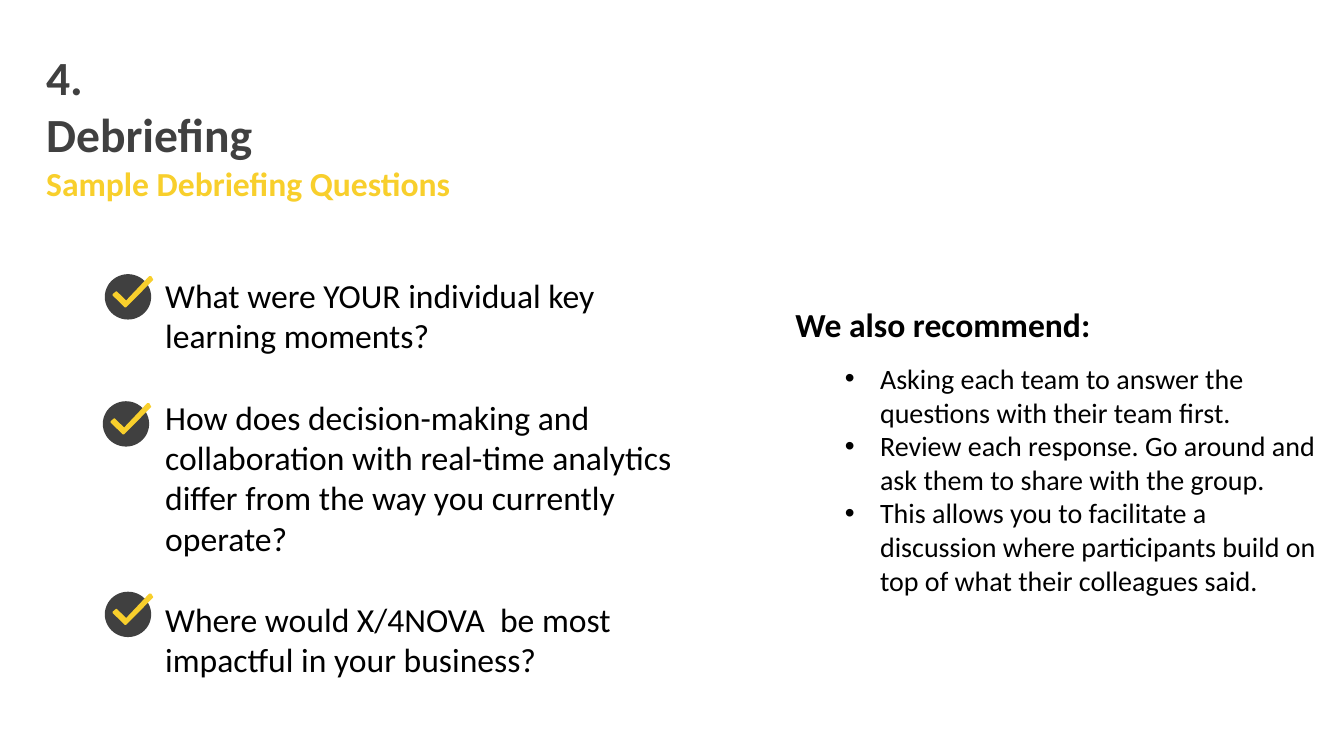
from pptx import Presentation
from pptx.dml.color import RGBColor
from pptx.enum.shapes import MSO_SHAPE
from pptx.enum.text import MSO_ANCHOR, MSO_AUTO_SIZE, PP_ALIGN
from pptx.util import Inches, Pt
from lxml.etree import SubElement
from pptx.oxml.ns import qn

COLORS = {"dark": "404040", "yellow": "F8CF2C", "black": "000000", "white": "FFFFFF"}
FONT = "Calibri"
W, H = Inches(13.33), Inches(7.5)
COL, ROW = W / 100, H / 100
TICK = [(17, 44), (24, 38), (26, 38), (46, 58), (96, 4), (100, 4),
        (104, 11), (104, 13), (52, 67), (46, 73), (43, 73), (17, 47)]
QUESTIONS = [
    "What were YOUR individual key learning moments?",
    "How does decision-making and collaboration with real-time analytics "
    "differ from the way you currently operate?",
    "Where would X/4NOVA  be most impactful in your business?",
]
BADGES = [(7.8, 36.27), (7.65, 53.07), (7.8, 78.27)]
ADVICE = [
    "Asking each team to answer the questions with their team first.",
    "Review each response. Go around and ask them to share with the group.",
    "This allows you to facilitate a discussion where participants build on "
    "top of what their colleagues said.",
]


def place(x, y, w, h):
    """Turn grid columns and rows into slide lengths."""
    return round(x * COL), round(y * ROW), round(w * COL), round(h * ROW)


def paint(shape, color):
    """Give a shape a plain fill without line or shadow."""
    shape.shadow.inherit = False
    shape.fill.solid()
    shape.fill.fore_color.rgb = RGBColor.from_string(COLORS[color])
    shape.line.fill.background()


def write(shape, lines):
    """Fill a shape with (text, size, color, bold) lines and return its paragraphs."""
    tf = shape.text_frame
    tf.word_wrap = True
    tf.auto_size = MSO_AUTO_SIZE.SHAPE_TO_FIT_TEXT
    tf.vertical_anchor = MSO_ANCHOR.TOP
    tf.text = "\n".join(text for text, *_ in lines)
    for p, (_, size, color, bold) in zip(tf.paragraphs, lines):
        p.alignment = PP_ALIGN.LEFT
        for r in p.runs:
            r.font.name, r.font.size, r.font.bold = FONT, Pt(size), bold
            r.font.color.rgb = RGBColor.from_string(COLORS[color])
    return tf.paragraphs


def add_bullet(p):
    """Give a paragraph a round bullet with a hanging indent."""
    pPr = p._p.get_or_add_pPr()
    pPr.set("marL", str(Inches(0.84)))
    pPr.set("indent", str(Inches(-0.35)))
    SubElement(pPr, qn("a:buFont")).set("typeface", "Arial")
    SubElement(pPr, qn("a:buChar")).set("char", "•")


def add_title(s, box):
    """Add the numbered heading and its subtitle."""
    write(s.shapes.add_textbox(*place(*box)), [
        ("4.", 34, "dark", True),
        ("Debriefing", 34, "dark", True),
        ("Sample Debriefing Questions", 24, "yellow", True),
    ])


def add_badge(s, box):
    """Add a dark disc with a yellow tick."""
    x, y, w, h = place(*box)
    shapes = s.shapes.add_group_shape().shapes
    paint(shapes.add_shape(MSO_SHAPE.OVAL, x, y, w, h), "dark")
    builder = shapes.build_freeform(*TICK[0], scale=(w / 100, h / 100))
    builder.add_line_segments(TICK[1:])
    paint(builder.convert_to_shape(x, y), "yellow")


def add_questions(s, box):
    """Add the debriefing questions with their badges."""
    tb = s.shapes.add_textbox(*place(*box))
    for p in write(tb, [(q, 24, "black", False) for q in QUESTIONS])[1:]:
        p.space_before = Pt(29.3)
    for x, y in BADGES:
        add_badge(s, (x, y, 3.45, 6))


def add_advice(s, box):
    """Add the recommendation panel with its bullet list."""
    panel = s.shapes.add_shape(MSO_SHAPE.RECTANGLE, *place(*box))
    paint(panel, "white")
    lines = [("We also recommend:", 24, "black", True)]
    lines += [(text, 20, "black", False) for text in ADVICE]
    heading, *items = write(panel, lines)
    heading.space_after = Pt(12)
    for p in items:
        add_bullet(p)


def main():
    """Build and save the slide."""
    prs = Presentation()
    prs.slide_width, prs.slide_height = W, H
    s = prs.slides.add_slide(prs.slide_layouts[6])
    add_title(s, (2.7, 5.73, 61.44, 22))
    add_questions(s, (11.55, 35.73, 41.56, 63.33))
    add_advice(s, (58.44, 39.6, 40.28, 40.4))
    prs.save("out.pptx")


if __name__ == "__main__":
    main()
